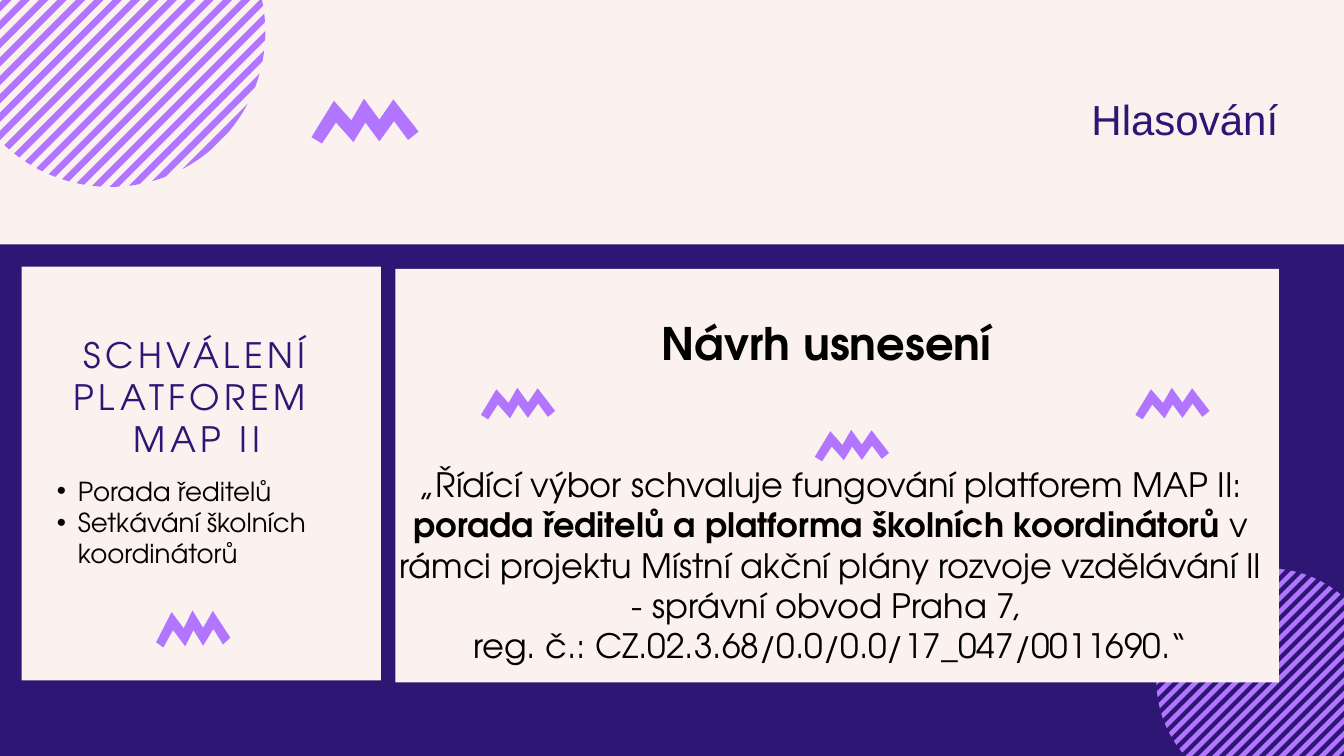
from math import acos, cos, pi, sin

from lxml import etree
from pptx import Presentation
from pptx import util as u
from pptx.dml.color import RGBColor
from pptx.enum import shapes, text
from pptx.oxml.ns import qn

PX = 9525  # EMU in one px, 96 px to the inch
COLORS = {"indigo": "2D1674", "cream": "FBF1EF", "violet": "B175FF", "black": "000000"}
SANS, GEOMETRIC = "Arial", "TeX Gyre Adventor"
ZIGZAG_SIZE = (153, 64)
ZIGZAG = [(15, 64), (0, 55), (32, 3), (57, 31), (75, 0), (97, 30), (117, 1),
          (153, 47), (138, 59), (118, 32), (97, 61), (77, 34), (60, 62), (35, 34)]
STRIPES, ARC_STEPS = 24, 4
# Stripe offsets along the diagonal, as shares of the circle's radius
FIRST_STRIPE, STRIPE_PITCH, STRIPE_WIDTH = -0.9725, 0.0838, 0.0419


def color(name):
    return RGBColor.from_string(COLORS[name])


def within(box, left, top, width, height):
    """Box given relative to the top left corner of another box."""
    return box[0] + left, box[1] + top, width, height


def paint(shape, name):
    shape.shadow.inherit = False
    shape.fill.solid()
    shape.fill.fore_color.rgb = color(name)
    shape.line.fill.background()


def add_panel(page, box):
    panel = page.shapes.add_shape(shapes.MSO_SHAPE.RECTANGLE, *(v * PX for v in box))
    paint(panel, "cream")


def add_outline(page, contours):
    """Violet freeform made of closed contours, whose points are in px."""
    contours = [[(round(x * PX), round(y * PX)) for x, y in points] for points in contours]
    builder = page.shapes.build_freeform(*contours[0][0], scale=1.0)
    for index, points in enumerate(contours):
        if index:
            builder.move_to(*points[0])
        builder.add_line_segments(points[1:], close=True)
    paint(builder.convert_to_shape(), "violet")


def add_zigzag(page, box):
    left, top, width, height = box
    add_outline(page, [[(left + x * width / ZIGZAG_SIZE[0], top + y * height / ZIGZAG_SIZE[1])
                        for x, y in ZIGZAG]])


def add_striped_circle(page, box):
    """Circle cut into diagonal stripes, each closed by an arc at both ends."""
    left, top, size, _ = box
    radius = size / 2

    def on_circle(angle):
        return left + radius * (1 + cos(angle)), top + radius * (1 + sin(angle))

    contours = []
    for stripe in range(STRIPES):
        start = acos(FIRST_STRIPE + stripe * STRIPE_PITCH)
        end = acos(FIRST_STRIPE + stripe * STRIPE_PITCH + STRIPE_WIDTH)
        arc = [start + (end - start) * step / ARC_STEPS for step in range(ARC_STEPS + 1)]
        contours.append([on_circle(pi / 4 + angle) for angle in arc]
                        + [on_circle(pi / 4 - angle) for angle in reversed(arc)])
    add_outline(page, contours)


def add_text(page, box, paragraphs, size, font=GEOMETRIC, ink="black", align="LEFT",
             inset=True, leading=None, tracking=None, bullet_indent=None):
    """Text box; each paragraph is a list of (words, bold) pairs."""
    frame = page.shapes.add_textbox(*(v * PX for v in box)).text_frame
    frame.word_wrap = True
    frame.auto_size = text.MSO_AUTO_SIZE.SHAPE_TO_FIT_TEXT
    if not inset:
        frame.margin_left = frame.margin_top = frame.margin_right = frame.margin_bottom = 0
    for index, spans in enumerate(paragraphs):
        para = frame.add_paragraph() if index else frame.paragraphs[0]
        para.alignment = getattr(text.PP_ALIGN, align)
        if leading:
            para.line_spacing = u.Pt(leading)
        if bullet_indent:
            props = para._p.get_or_add_pPr()
            props.set("marL", str(bullet_indent * PX))
            props.set("indent", str(-bullet_indent * PX))
            etree.SubElement(props, qn("a:buFont")).set("typeface", SANS)
            etree.SubElement(props, qn("a:buChar")).set("char", "•")
        for words, bold in spans:
            span = para.add_run()
            span.text = words
            span.font.size = u.Pt(size)
            span.font.name = font
            span.font.bold = bold
            span.font.color.rgb = color(ink)
            if tracking:
                span._r.get_or_add_rPr().set("spc", str(tracking))


def add_header(page, box):
    add_panel(page, box)
    add_striped_circle(page, within(box, -11, -90, 443, 443))
    add_zigzag(page, within(box, 498, 227, *ZIGZAG_SIZE))
    add_text(page, within(box, 870, 225, 1009, 67), [[("Hlasování", False)]], 45,
             font=SANS, ink="indigo", align="RIGHT", inset=False, leading=49.5)


def add_topic_card(page, box):
    add_panel(page, box)
    add_text(page, within(box, -9, 95, 519, 181),
             [[("SCHVÁLENÍ PLATFOREM ", False)], [("MAP II", False)]], 37.5,
             ink="indigo", align="CENTER", inset=False, leading=45, tracking=470)
    add_text(page, within(box, 41, 293, 450, 145),
             [[("Porada ředitelů", False)], [("Setkávání školních koordinátorů", False)]],
             28, bullet_indent=30)
    add_zigzag(page, within(box, 192, 491, 106, 53))


def add_resolution_card(page, box):
    add_panel(page, box)
    for left, top in ((122, 170), (599, 230), (1057, 170)):
        add_zigzag(page, within(box, left, top, 106, 45))
    add_text(page, within(box, -4, 63, 1240, 87), [[("Návrh usnesení", True)]], 48,
             align="CENTER")
    add_text(page, within(box, -4, 274, 1251, 300), [
        [("„Řídící výbor schvaluje fungování platforem MAP II: ", False),
         ("porada ředitelů a platforma školních koordinátorů ", True),
         ("v rámci projektu Místní akční plány rozvoje vzdělávání II "
          "- správní obvod Praha 7, ", False)],
        [("reg. č.: CZ.02.3.68/0.0/0.0/17_047/0011690.“", False)],
    ], 36, align="CENTER")


def main():
    deck = Presentation()
    deck.slide_width, deck.slide_height = 1920 * PX, 1080 * PX
    page = deck.slides.add_slide(deck.slide_layouts[6])
    page.background.fill.solid()
    page.background.fill.fore_color.rgb = color("indigo")
    add_header(page, (-53, -86, 2047, 435))
    add_striped_circle(page, (1652, 812, 321, 321))
    add_topic_card(page, (31, 381, 513, 591))
    add_resolution_card(page, (565, 384, 1262, 591))
    deck.save("out.pptx")


if __name__ == "__main__":
    main()
